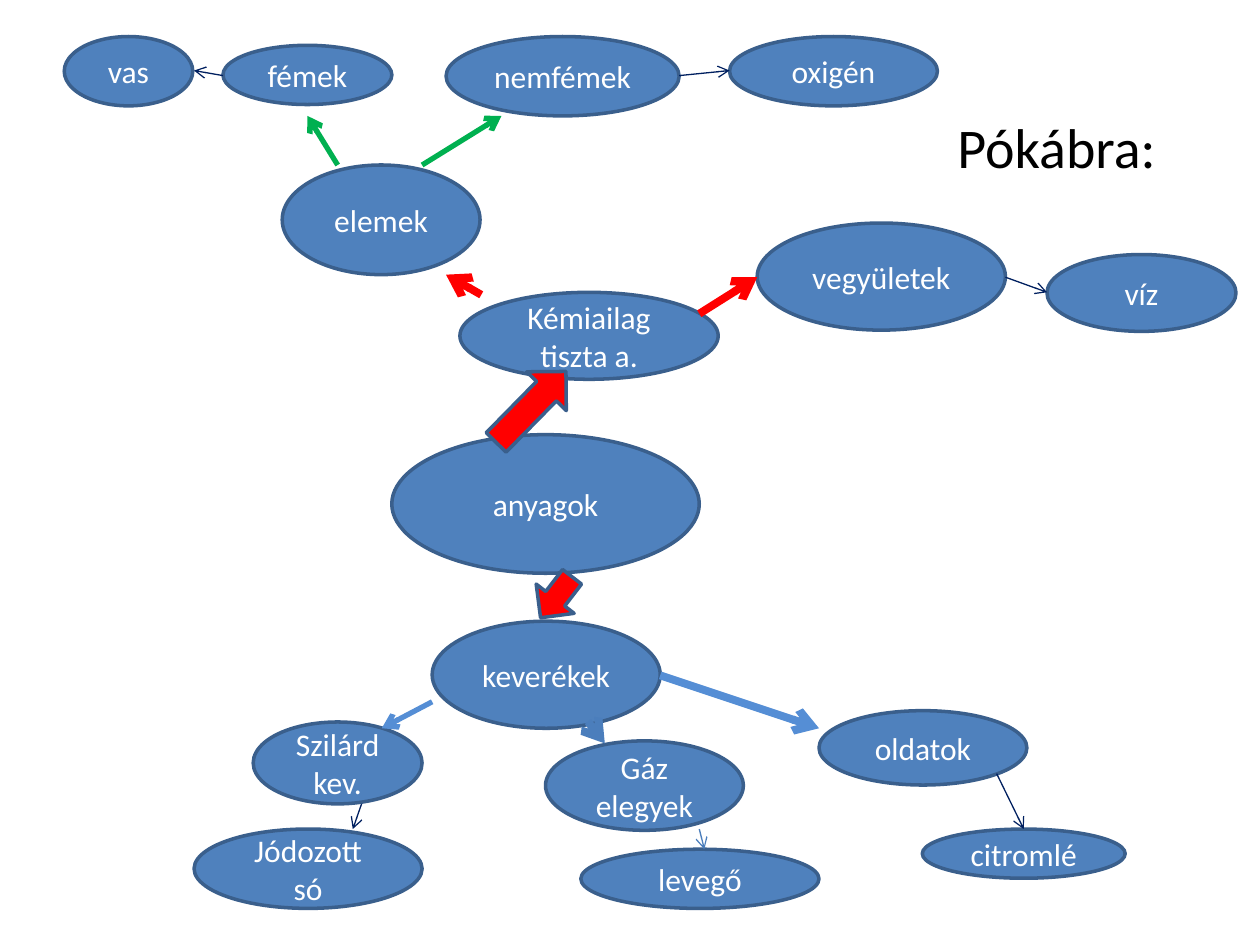
from lxml import etree
from pptx import Presentation
from pptx import util as u
from pptx.dml.color import RGBColor
from pptx.enum import shapes, text
from pptx.oxml.ns import qn

BLUE, RED, GREEN = "4F81BD", "FF0000", "00B050"
NAVY, SKY, STEEL = "002060", "558ED5", "4B7EBC"


def rgb(color):
    return RGBColor.from_string(color)


class MindMap:
    font = "Calibri"
    outline = "3A5F8C"

    def __init__(self, s):
        self.s = s

    def add_text(self, p, words, size, color):
        r = p.add_run()
        r.text = words
        r.font.name = self.font
        r.font.size = u.Pt(size)
        r.font.color.rgb = rgb(color)

    def shape(self, kind, box, fill):
        sp = self.s.shapes.add_shape(kind, *map(u.Inches, box))
        sp.shadow.inherit = False
        sp.fill.solid()
        sp.fill.fore_color.rgb = rgb(fill)
        sp.line.color.rgb = rgb(self.outline)
        sp.line.width = u.Pt(2)
        return sp

    def title(self, words, box):
        tf = self.s.shapes.add_textbox(*map(u.Inches, box)).text_frame
        tf.word_wrap = True
        self.add_text(tf.paragraphs[0], words, 32, "000000")

    def bubble(self, words, *box):
        sp = self.shape(shapes.MSO_SHAPE.OVAL, box, BLUE)
        tf = sp.text_frame
        tf.word_wrap = True
        tf.vertical_anchor = text.MSO_ANCHOR.MIDDLE
        p = tf.paragraphs[0]
        p.alignment = text.PP_ALIGN.CENTER
        self.add_text(p, words, 18, "FFFFFF")
        return sp

    def block_arrow(self, box, angle):
        sp = self.shape(shapes.MSO_SHAPE.RIGHT_ARROW, box, RED)
        sp.rotation = angle

    def arrow(self, start, end, color, width):
        c = self.s.shapes.add_connector(
            shapes.MSO_CONNECTOR.STRAIGHT, *map(u.Inches, start + end))
        c.line.color.rgb = rgb(color)
        c.line.width = u.Pt(width)
        props = c._element.spPr
        etree.SubElement(props.find(qn("a:ln")), qn("a:tailEnd"), type="arrow")
        etree.SubElement(props, qn("a:effectLst"))
        return c


BUBBLES = [
    ("anyagok", 3.11, 3.45, 2.44, 1.1),
    ("elemek", 2.24, 1.31, 1.57, 0.87),
    ("keverékek", 3.43, 4.93, 1.81, 0.85),
    ("vegyületek", 6.01, 1.77, 1.97, 0.85),
    ("Kémiailag tiszta a.", 3.65, 2.32, 2.05, 0.69),
    ("Szilárd kev.", 2.01, 5.73, 1.34, 0.65),
    ("Gáz elegyek", 4.33, 5.88, 1.57, 0.71),
    ("oldatok", 6.5, 5.64, 1.65, 0.59),
    ("fémek", 1.77, 0.36, 1.34, 0.47),
    ("nemfémek", 3.54, 0.29, 1.85, 0.63),
    ("vas", 0.51, 0.29, 1.02, 0.55),
    ("víz", 8.31, 2.02, 1.5, 0.61),
    ("levegő", 4.61, 6.74, 1.89, 0.47),
    ("oxigén", 5.79, 0.29, 1.65, 0.55),
    ("citromlé", 7.32, 6.58, 1.61, 0.39),
    ("Jódozott só", 1.54, 6.58, 1.81, 0.63),
]

ARROWS = [
    ((5.55, 2.49), (6.01, 2.2), RED, 4.5),
    ((3.82, 2.34), (3.54, 2.18), RED, 4.5),
    ((5.24, 5.36), (6.5, 5.78), SKY, 4.5),
    ((3.43, 5.57), (3.03, 5.78), SKY, 3),
    ((4.73, 5.81), (4.8, 5.9), STEEL, 4.5),
    ((3.35, 1.31), (3.98, 0.92), GREEN, 3),
    ((2.68, 1.31), (2.44, 0.92), GREEN, 3),
    ((5.39, 0.6), (5.79, 0.56), NAVY, 0.75),
    ((1.77, 0.6), (1.54, 0.56), NAVY, 0.75),
    ((7.98, 2.2), (8.31, 2.32), NAVY, 0.75),
    ((5.55, 6.58), (5.59, 6.74), STEEL, 0.75),
    ((2.87, 6.38), (2.8, 6.58), NAVY, 0.75),
]


def main():
    prs = Presentation()
    prs.slide_width, prs.slide_height = u.Inches(10), u.Inches(7.5)
    m = MindMap(prs.slides.add_slide(prs.slide_layouts[6]))

    m.title("Pókábra:", (7.5, 0.84, 2, 0.65))
    bubbles = {b[0]: m.bubble(*b) for b in BUBBLES}
    m.block_arrow((3.82, 3.01, 0.79, 0.44), 314.5)
    m.block_arrow((4.21, 4.55, 0.41, 0.38), 127.6)
    for a in ARROWS:
        m.arrow(*a)
    to_juice = m.arrow((7.91, 6.14), (8.13, 6.58), NAVY, 0.75)
    to_juice.end_connect(bubbles["citromlé"], 0)

    prs.save("out.pptx")


if __name__ == "__main__":
    main()
